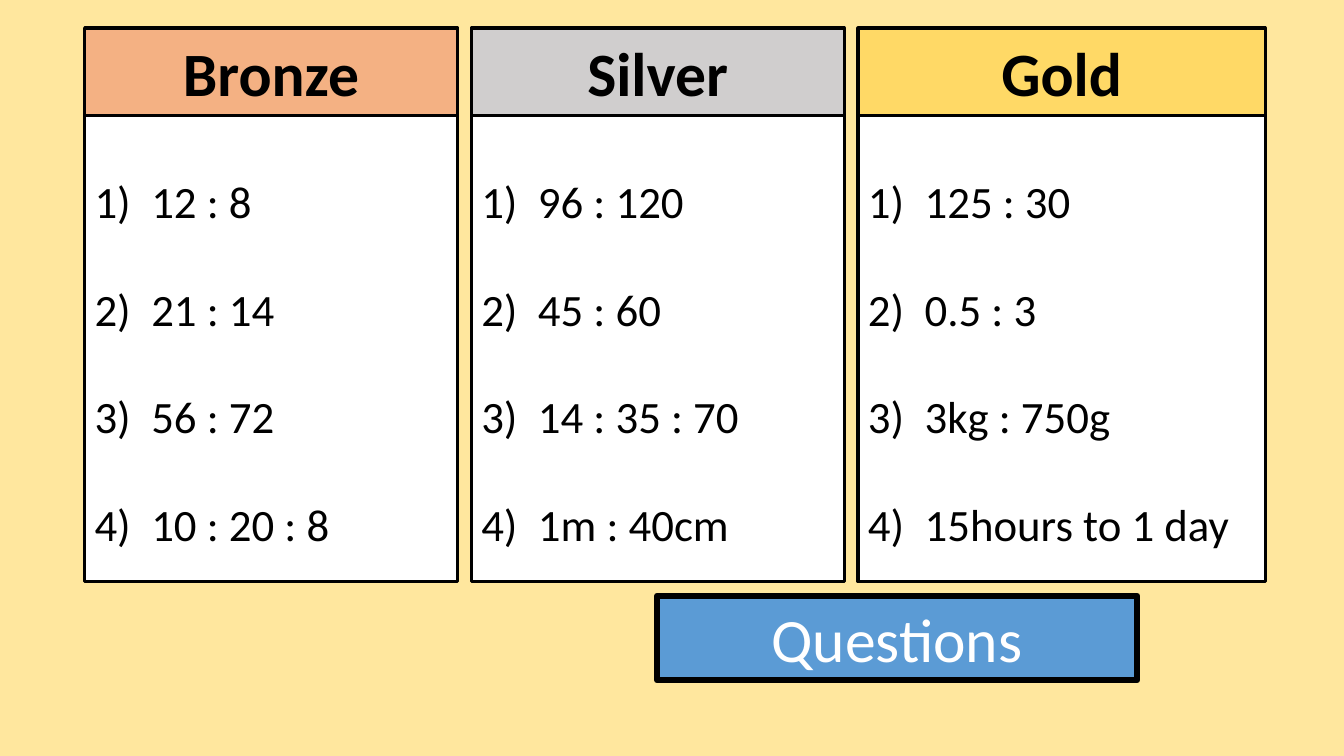
"""Build a slide of ratio questions at bronze, silver and gold level."""
import pptx
import pptx.dml.color
import pptx.enum.shapes
import pptx.enum.text
import pptx.oxml.ns
import pptx.util
from lxml import etree

Pt = pptx.util.Pt
ALIGN = pptx.enum.text.PP_ALIGN
ANCHOR = pptx.enum.text.MSO_ANCHOR


def colour(value):
    return pptx.dml.color.RGBColor.from_string(value)


class QuestionSlide:
    font = "Calibri"
    ink = "000000"
    heading_size = 44
    question_size = 32
    hanging = 40.5

    def __init__(self, deck, background):
        self.page = deck.slides.add_slide(deck.slide_layouts[6])
        fill = self.page.background.fill
        fill.solid()
        fill.fore_color.rgb = colour(background)

    def panel(self, left, top, width, height, fill, line_width, anchor):
        box = self.page.shapes.add_shape(
            pptx.enum.shapes.MSO_SHAPE.RECTANGLE,
            Pt(left), Pt(top), Pt(width), Pt(height))
        box.shadow.inherit = False
        box.fill.solid()
        box.fill.fore_color.rgb = colour(fill)
        box.line.color.rgb = colour(self.ink)
        box.line.width = Pt(line_width)
        box.text_frame.word_wrap = True
        box.text_frame.vertical_anchor = anchor
        return box.text_frame

    def add_span(self, para, text, size, ink, bold=False):
        span = para.add_run()
        span.text = text
        span.font.name = self.font
        span.font.size = Pt(size)
        span.font.bold = bold
        span.font.color.rgb = colour(ink)

    def heading(self, text, left, top, width, height, fill,
                line_width=2.25, ink="000000", bold=True):
        frame = self.panel(left, top, width, height, fill, line_width, ANCHOR.MIDDLE)
        para = frame.paragraphs[0]
        para.alignment = ALIGN.CENTER
        self.add_span(para, text, self.heading_size, ink, bold)

    def questions(self, items, left, top, width, height):
        frame = self.panel(left, top, width, height, "FFFFFF", 2.25, ANCHOR.TOP)
        for index, item in enumerate(items):
            para = frame.add_paragraph() if index else frame.paragraphs[0]
            para.alignment = ALIGN.LEFT
            para.line_spacing = 2.0
            self.number(para)
            self.add_span(para, item, self.question_size, self.ink)

    def number(self, para):
        properties = para._p.get_or_add_pPr()
        properties.set("marL", str(Pt(self.hanging)))
        properties.set("indent", str(-Pt(self.hanging)))
        bullet_font = etree.SubElement(properties, pptx.oxml.ns.qn("a:buFont"))
        bullet_font.set("typeface", "+mj-lt")
        bullet = etree.SubElement(properties, pptx.oxml.ns.qn("a:buAutoNum"))
        bullet.set("type", "arabicParenR")


def main():
    deck = pptx.Presentation()
    deck.slide_width = Pt(960)
    deck.slide_height = Pt(540)
    slide = QuestionSlide(deck, "FFE79E")

    levels = [
        ("Bronze", "F4B183", 266.4,
         ["12 : 8", "21 : 14", "56 : 72", "10 : 20 : 8"]),
        ("Silver", "D0CECE", 266.4,
         ["96 : 120", "45 : 60", "14 : 35 : 70", "1m : 40cm"]),
        ("Gold", "FFD966", 290.9,
         ["125 : 30", "0.5 : 3", "3kg : 750g", "15hours to 1 day"]),
    ]
    left, gap = 60.5, 9.8
    for name, fill, width, items in levels:
        slide.questions(items, left, 82.2, width, 333.2)
        slide.heading(name, left, 20, width, 62.5, fill)
        left += width + gap

    slide.heading("Questions", 469.5, 425.5, 342.7, 60.5, "5B9BD5",
                  line_width=4.5, ink="FFFFFF", bold=False)
    deck.save("out.pptx")


if __name__ == "__main__":
    main()
